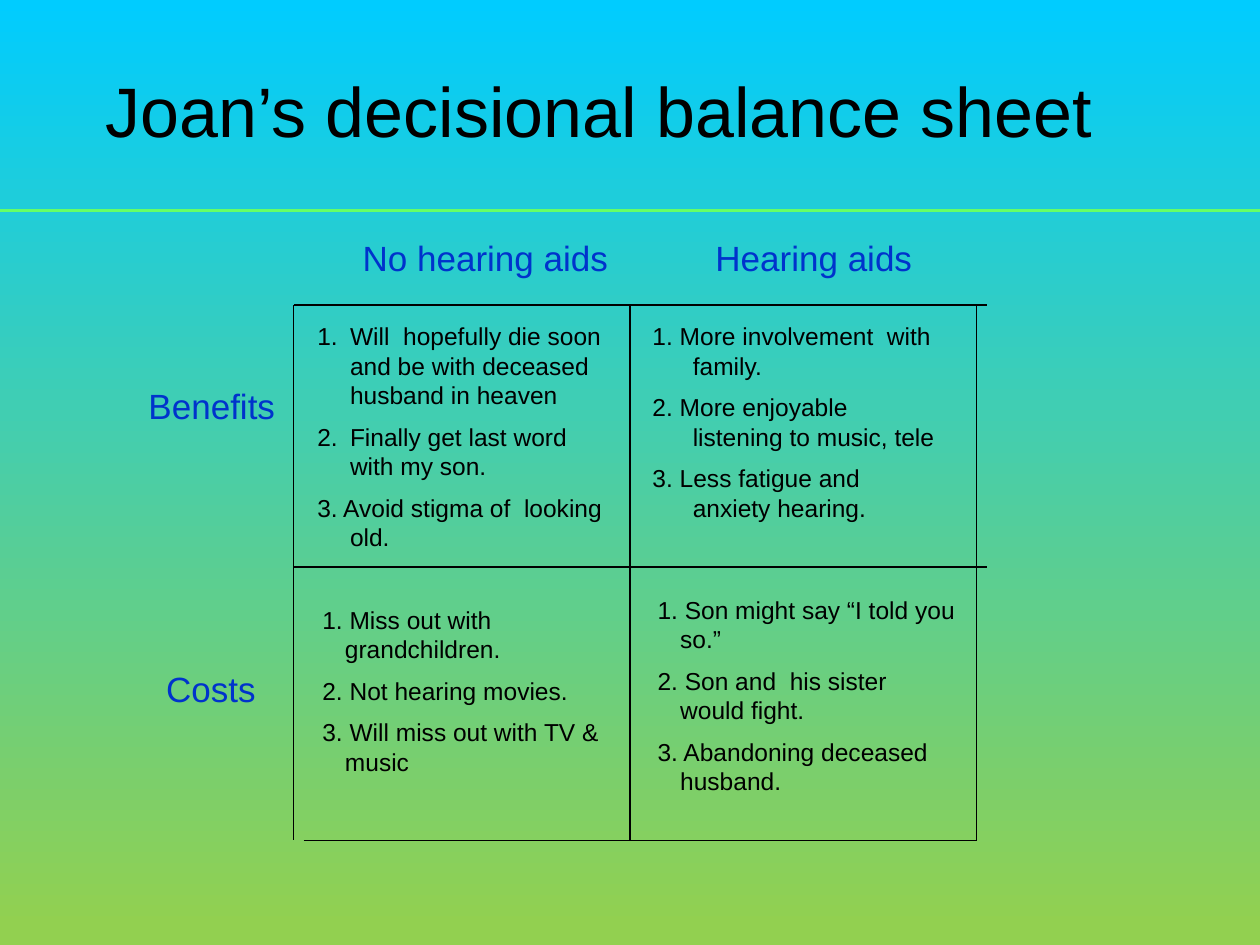
from typing import NamedTuple

from lxml.etree import SubElement
from pptx import Presentation
from pptx.dml.color import RGBColor
from pptx.enum.shapes import MSO_CONNECTOR
from pptx.enum.text import MSO_ANCHOR, PP_ALIGN
from pptx.oxml.ns import qn
from pptx.util import Inches, Pt

COLORS = {
    "sky": "00CCFF",
    "grass": "92D050",
    "rule": "66FF66",
    "label": "0033CC",
    "ink": "000000",
}
FONT = "Arial"
WIDTH, HEIGHT = 10, 7.5
COLUMNS = (2.33, 5, 7.75)
ROWS = (2.42, 4.5, 6.67)
OVERHANG = 0.08


class Label(NamedTuple):
    text: str
    left: float
    top: float
    width: float


class Cell(NamedTuple):
    column: int
    row: int
    offset: tuple[float, float]
    width: float
    height: float
    indent: float
    items: tuple[str, ...]
    auto_numbered: int = 0


class Line(NamedTuple):
    start: tuple[float, float]
    end: tuple[float, float]
    color: str = "ink"
    weight: float = 0.75


LABELS = (
    Label("No hearing aids", COLUMNS[0] + 0.45, 1.83, 2.4),
    Label("Hearing aids", COLUMNS[1] + 0.58, 1.83, 2),
    Label("Benefits", 1.08, 3, 1.75),
    Label("Costs", 1.22, 5.25, 1.1),
)

CELLS = (
    Cell(0, 0, (0.09, 0.08), 2.5, 2.49, 0.26, (
        "Will  hopefully die soon and be with deceased husband in heaven",
        "Finally get last word with my son.",
        "3. Avoid stigma of  looking old.",
    ), auto_numbered=2),
    Cell(1, 0, (0.08, 0.08), 2.49, 1.73, 0.32, (
        "1. More involvement  with family.",
        "2. More enjoyable listening to music, tele",
        "3. Less fatigue and anxiety hearing.",
    )),
    Cell(0, 1, (0.13, 0.25), 2.5, 1.5, 0.18, (
        "1. Miss out with grandchildren.",
        "2. Not hearing movies.",
        "3. Will miss out with TV & music",
    )),
    Cell(1, 1, (0.12, 0.17), 2.58, 1.75, 0.18, (
        "1. Son might say “I told you so.”",
        "2. Son and  his sister would fight.",
        "3. Abandoning deceased husband.",
    )),
)

LEFT, MIDDLE, RIGHT = COLUMNS
TOP, CENTER, BOTTOM = ROWS
LINES = (
    Line((MIDDLE, TOP), (MIDDLE, BOTTOM)),
    Line((LEFT, CENTER), (RIGHT + OVERHANG, CENTER)),
    Line((LEFT, CENTER), (LEFT, BOTTOM)),
    Line((LEFT + OVERHANG, BOTTOM), (RIGHT, BOTTOM)),
    Line((RIGHT, BOTTOM), (RIGHT, TOP)),
    Line((RIGHT + OVERHANG, TOP), (LEFT, TOP)),
    Line((LEFT, CENTER + OVERHANG), (LEFT, TOP)),
    Line((0, 1.67), (WIDTH, 1.67), "rule", 2),
)


def color_of(name: str) -> RGBColor:
    return RGBColor.from_string(COLORS[name])


def format_runs(paragraph, size: float, color: str) -> None:
    for run in paragraph.runs:
        run.font.name = FONT
        run.font.size = Pt(size)
        run.font.color.rgb = color_of(color)


def paint_background(slide) -> None:
    fill = slide.background.fill
    fill.gradient()
    fill.gradient_angle = 270
    for stop, name, position in zip(fill.gradient_stops, ("sky", "grass"), (0, 0.98)):
        stop.color.rgb = color_of(name)
        stop.position = position


def write_title(slide, text: str) -> None:
    title = slide.shapes.title
    title.left, title.top = Inches(0.5), Inches(0.33)
    title.width, title.height = Inches(8.5), Inches(1.08)
    title.text_frame.text = text
    title.text_frame.vertical_anchor = MSO_ANCHOR.MIDDLE
    paragraph = title.text_frame.paragraphs[0]
    paragraph.alignment = PP_ALIGN.CENTER
    format_runs(paragraph, 40, "ink")


def add_text_frame(slide, left: float, top: float, width: float, height: float):
    box = slide.shapes.add_textbox(Inches(left), Inches(top), Inches(width), Inches(height))
    box.text_frame.word_wrap = True
    return box.text_frame


def draw_label(slide, label: Label) -> None:
    text_frame = add_text_frame(slide, label.left, label.top, label.width, 0.43)
    text_frame.text = label.text
    format_runs(text_frame.paragraphs[0], 20, "label")


def draw_cell(slide, cell: Cell) -> None:
    left = COLUMNS[cell.column] + cell.offset[0]
    top = ROWS[cell.row] + cell.offset[1]
    text_frame = add_text_frame(slide, left, top, cell.width, cell.height)
    text_frame.text = "\n".join(cell.items)
    for index, paragraph in enumerate(text_frame.paragraphs):
        format_runs(paragraph, 14, "ink")
        paragraph.space_before = Pt(7 if index else 0)
        properties = paragraph._p.get_or_add_pPr()
        properties.set("marL", str(Inches(cell.indent)))
        properties.set("indent", str(-Inches(cell.indent)))
        if index < cell.auto_numbered:
            SubElement(properties, qn("a:buFont"), typeface=FONT)
            SubElement(properties, qn("a:buAutoNum"), type="arabicPeriod")


def draw_line(slide, line: Line) -> None:
    points = [Inches(value) for value in (*line.start, *line.end)]
    connector = slide.shapes.add_connector(MSO_CONNECTOR.STRAIGHT, *points)
    connector.line.color.rgb = color_of(line.color)
    connector.line.width = Pt(line.weight)
    SubElement(connector._element.spPr, qn("a:effectLst"))


def main() -> None:
    presentation = Presentation()
    presentation.slide_width = Inches(WIDTH)
    presentation.slide_height = Inches(HEIGHT)
    slide = presentation.slides.add_slide(presentation.slide_layouts[5])
    paint_background(slide)
    write_title(slide, "Joan’s decisional balance sheet")
    for line in LINES:
        draw_line(slide, line)
    for label in LABELS:
        draw_label(slide, label)
    for cell in CELLS:
        draw_cell(slide, cell)
    presentation.save("out.pptx")


if __name__ == "__main__":
    main()
